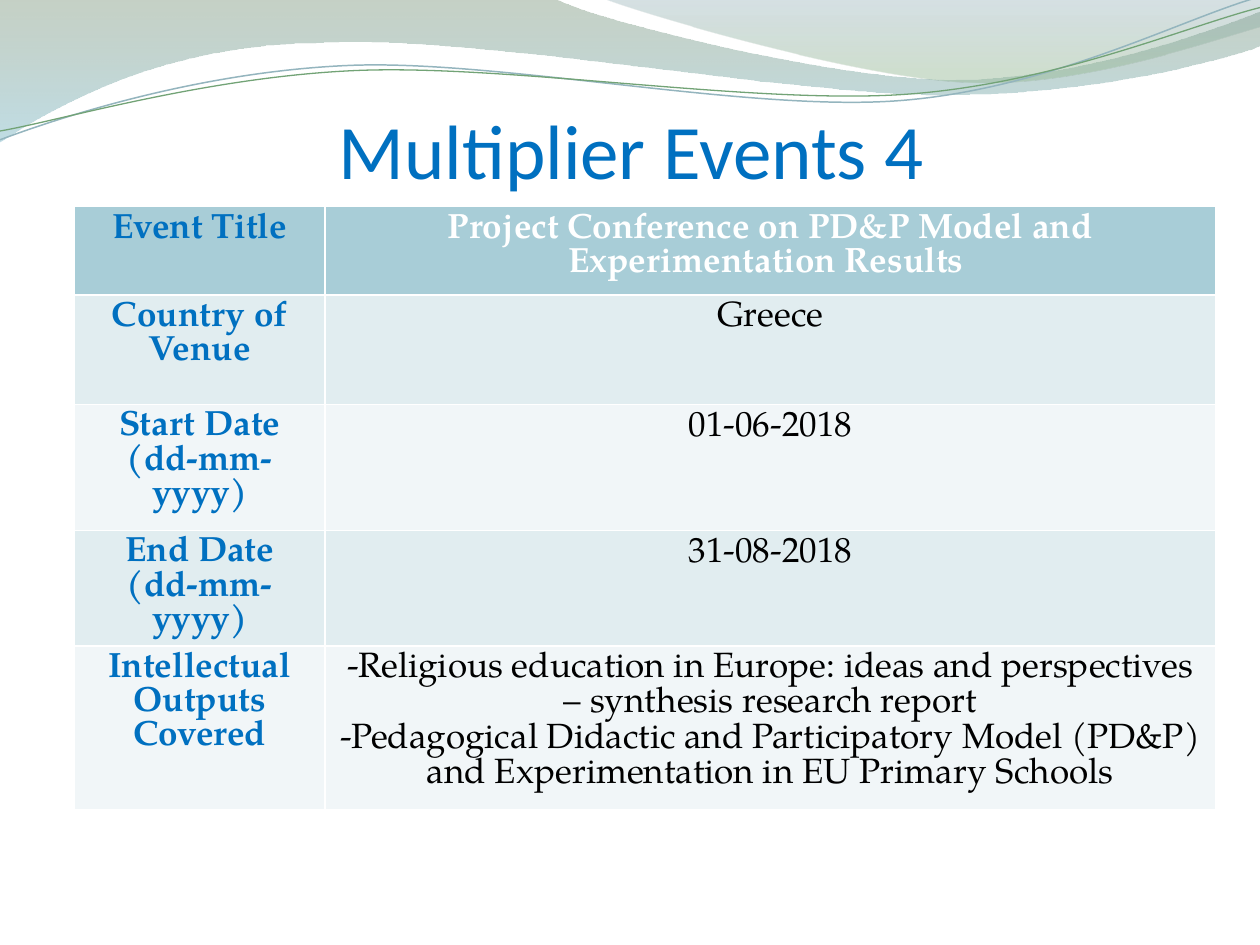
from dataclasses import dataclass
from typing import Optional

from lxml.etree import SubElement
from pptx import Presentation
from pptx.dml.color import RGBColor
from pptx.enum.text import MSO_ANCHOR, MSO_AUTO_SIZE, PP_ALIGN
from pptx.oxml import parse_xml
from pptx.oxml.ns import nsdecls, qn
from pptx.util import Inches, Pt

BLUE = RGBColor(0x00, 0x70, 0xC0)
WHITE = RGBColor(0xFF, 0xFF, 0xFF)
BLACK = RGBColor(0x00, 0x00, 0x00)
HEADER_FILL = RGBColor(0xA8, 0xCD, 0xD7)
BAND_FILLS = (RGBColor(0xF1, 0xF6, 0xF8), RGBColor(0xE1, 0xED, 0xF0))
SAGE = RGBColor(0x80, 0x99, 0x80)
AQUA = RGBColor(0x8D, 0xC1, 0xCF)
STEEL = RGBColor(0x77, 0x9B, 0xA4)
MOSS = RGBColor(0x96, 0xB9, 0x96)
LINE_BLUE = RGBColor(0x94, 0xB5, 0xBE)
LINE_GREEN = RGBColor(0x72, 0xA3, 0x76)

Point = tuple[float, float]


@dataclass
class Stop:
    position: int
    color: RGBColor
    opacity: int


@dataclass
class Wave:
    """Outline of segments: one point is a line, three points are a curve."""
    start: Point
    segments: list[tuple[Point, ...]]
    stops: tuple[Stop, ...] = ()
    line_color: Optional[RGBColor] = None
    line_width: float = 0


@dataclass
class Row:
    label: str
    value: str
    height: float


WAVES = [
    Wave((0, -0.01), [
        ((4.4, -0.01),),
        ((4.76, 0.17), (6.64, 0.63), (7.58, 0.63)),
        ((8.53, 0.63), (9.58, 0.26), (10, 0.09)),
        ((10.01, 0.36),),
        ((9.83, 0.44), (8.7, 0.76), (7.46, 0.75)),
        ((6.22, 0.75), (3.82, 0.28), (2.57, 0.34)),
        ((1.29, 0.35), (0.46, 0.83), (-0.01, 1.13)),
    ], stops=(Stop(0, SAGE, 45), Stop(100, AQUA, 55))),
    Wave((4.79, -0.01), [
        ((5.09, 0.11), (6.82, 0.62), (7.69, 0.65)),
        ((8.56, 0.69), (9.61, 0.32), (10, 0.21)),
        ((10, 0),),
    ], stops=(Stop(0, STEEL, 30), Stop(80, MOSS, 45))),
    Wave((0, 1.11), [
        ((0.48, 0.93), (1.58, 0.57), (2.77, 0.52)),
        ((3.95, 0.47), (5.93, 0.89), (7.13, 0.8)),
        ((8.33, 0.71), (9.38, 0.15), (9.98, -0.02)),
    ], line_color=LINE_BLUE, line_width=0.85),
    Wave((0, 1.04), [
        ((0.47, 0.96), (1.64, 0.61), (2.83, 0.56)),
        ((4.03, 0.51), (5.97, 0.83), (7.17, 0.75)),
        ((8.36, 0.67), (9.41, 0.21), (10, 0.06)),
    ], line_color=LINE_GREEN, line_width=0.75),
]

ROWS = [
    Row("Event Title", "Project Conference on PD&P Model and Experimentation Results ", 0.7),
    Row("Country of Venue", "Greece", 0.87),
    Row("Start Date (dd-mm-yyyy)", "01-06-2018", 1),
    Row("End Date (dd-mm-yyyy)", "31-08-2018", 0.87),
    Row("Intellectual Outputs Covered",
        "-Religious education in Europe: ideas and perspectives – synthesis research report\n"
        "-Pedagogical Didactic and Participatory Model (PD&P) and Experimentation"
        " in EU Primary Schools", 1.3),
]
COLUMN_WIDTHS = (1.99, 7.07)


def set_font(font, color: RGBColor, **values) -> None:
    for name, value in values.items():
        setattr(font, name, value)
    font.color.rgb = color


def gradient_fill(stops: tuple[Stop, ...]):
    """Top-to-bottom gradient with an opacity at each stop."""
    marks = "".join(
        f'<a:gs pos="{stop.position * 1000}"><a:srgbClr val="{stop.color}">'
        f'<a:alpha val="{stop.opacity * 1000}"/></a:srgbClr></a:gs>' for stop in stops)
    return parse_xml(f'<a:gradFill {nsdecls("a")} rotWithShape="1"><a:gsLst>{marks}</a:gsLst>'
                     '<a:lin ang="5400000" scaled="0"/></a:gradFill>')


def curve_segments(shape, segments: list[tuple[Point, ...]]) -> None:
    """Turn each run of three straight steps into one Bezier curve."""
    outline = next(shape.element.iter(qn("a:path")))
    steps = iter(outline.findall(qn("a:lnTo")))
    for segment in segments:
        group = [next(steps) for _ in segment]
        if len(group) == 3:
            curve = SubElement(outline, qn("a:cubicBezTo"))
            group[0].addprevious(curve)
            for step in group:
                curve.append(step[0])
                outline.remove(step)


def draw_wave(page, wave: Wave):
    builder = page.shapes.build_freeform(*map(Inches, wave.start))
    points = [tuple(map(Inches, point)) for segment in wave.segments for point in segment]
    builder.add_line_segments(points, close=bool(wave.stops))
    shape = builder.convert_to_shape()
    curve_segments(shape, wave.segments)
    shape.shadow.inherit = False
    shape.fill.background()
    if wave.stops:
        shape.line.fill.background()
        blank = shape.element.spPr.find(qn("a:noFill"))
        blank.getparent().replace(blank, gradient_fill(wave.stops))
    else:
        shape.line.color.rgb = wave.line_color
        shape.line.width = Pt(wave.line_width)
    return shape


def draw_title(page) -> None:
    title = page.shapes.title
    box = {"left": 0.51, "top": 0.68, "width": 9, "height": 0.87}
    for name, value in box.items():
        setattr(title, name, Inches(value))
    frame = title.text_frame
    frame.text = "Multiplier Events 4"
    layout = {"margin_left": 0, "margin_top": Inches(0.05), "margin_right": 0,
              "margin_bottom": 0, "vertical_anchor": MSO_ANCHOR.BOTTOM,
              "auto_size": MSO_AUTO_SIZE.NONE, "word_wrap": True}
    for name, value in layout.items():
        setattr(frame, name, value)
    para = frame.paragraphs[0]
    para.alignment = PP_ALIGN.CENTER
    set_font(para.runs[0].font, BLUE, name="Calibri", size=Pt(44))


def fill_cell(cell, text: str, fill: RGBColor, color: RGBColor, bold: bool) -> None:
    cell.fill.solid()
    cell.fill.fore_color.rgb = fill
    cell.text = text
    for para in cell.text_frame.paragraphs:
        para.alignment = PP_ALIGN.CENTER
        for span in para.runs:
            set_font(span.font, color, name="TeX Gyre Pagella", size=Pt(20), bold=bold)


def draw_event_table(page) -> None:
    table = page.shapes.add_table(
        len(ROWS), len(COLUMN_WIDTHS), Inches(0.59), Inches(1.64),
        Inches(sum(COLUMN_WIDTHS)), Inches(sum(row.height for row in ROWS))).table
    for column, width in zip(table.columns, COLUMN_WIDTHS):
        column.width = Inches(width)
    for index, row in enumerate(ROWS):
        header = index == 0
        fill = HEADER_FILL if header else BAND_FILLS[index % 2]
        table.rows[index].height = Inches(row.height)
        fill_cell(table.cell(index, 0), row.label, fill, BLUE, True)
        fill_cell(table.cell(index, 1), row.value, fill, WHITE if header else BLACK, header)


def main() -> None:
    deck = Presentation()
    deck.slide_width, deck.slide_height = Inches(10), Inches(7.5)
    title_only = deck.slide_layouts[5]
    page = deck.slides.add_slide(title_only)
    master_tree = title_only.slide_master.shapes.element
    for index, wave in enumerate(WAVES, start=2):
        master_tree.insert(index, draw_wave(page, wave).element)
    draw_title(page)
    draw_event_table(page)
    deck.save("out.pptx")


if __name__ == "__main__":
    main()
